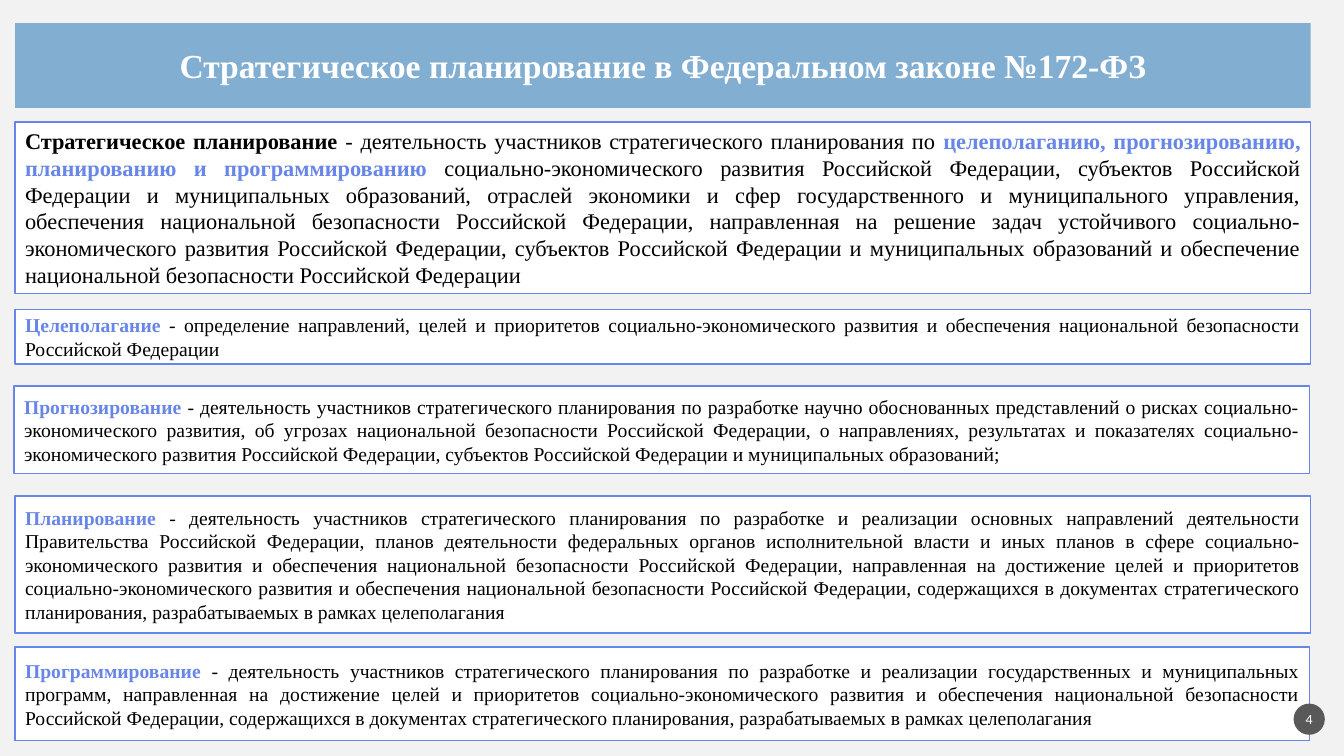
from dataclasses import dataclass

from pptx import Presentation
from pptx.dml.color import RGBColor
from pptx.enum.shapes import MSO_SHAPE as Preset
from pptx.enum.text import MSO_ANCHOR as Anchor, MSO_AUTO_SIZE as AutoSize, PP_ALIGN as Align
from pptx.util import Emu, Pt

PX = 9144  # 100 px to the inch

BACKGROUND = RGBColor(0xF2, 0xF2, 0xF2)
BANNER = RGBColor(0x82, 0xAE, 0xD2)
ACCENT = RGBColor(0x68, 0x86, 0xE7)
BADGE = RGBColor(0x59, 0x59, 0x59)
WHITE = RGBColor(0xFF, 0xFF, 0xFF)
BLACK = RGBColor(0x00, 0x00, 0x00)
SERIF = "Times New Roman"


@dataclass
class Span:
    text: str
    color: RGBColor = BLACK
    bold: bool = False


@dataclass
class Definition:
    left: int
    top: int
    width: int
    height: int
    spans: list[Span]
    size: int = 14


def term(word: str) -> Span:
    return Span(word, ACCENT, True)


DEFINITIONS = [
    Definition(15, 121, 1285, 170, [
        Span("Стратегическое планирование ", bold=True),
        Span("- деятельность участников стратегического планирования по "),
        term("целеполаганию, прогнозированию, планированию и программированию "),
        Span("социально-экономического развития Российской Федерации, субъектов Российской "
             "Федерации и муниципальных образований, отраслей экономики и сфер государственного "
             "и муниципального управления, обеспечения национальной безопасности Российской "
             "Федерации, направленная на решение задач устойчивого социально-экономического "
             "развития Российской Федерации, субъектов Российской Федерации и муниципальных "
             "образований и обеспечение национальной безопасности Российской Федерации"),
    ], size=16),
    Definition(15, 307, 1285, 54, [
        term("Целеполагание"),
        Span(" - определение направлений, целей и приоритетов социально-экономического развития "
             "и обеспечения национальной безопасности Российской Федерации"),
    ]),
    Definition(14, 383, 1285, 87, [
        term("Прогнозирование"),
        Span(" - деятельность участников стратегического планирования по разработке научно "
             "обоснованных представлений о рисках социально-экономического развития, об угрозах "
             "национальной безопасности Российской Федерации, о направлениях, результатах и "
             "показателях социально-экономического развития Российской Федерации, субъектов "
             "Российской Федерации и муниципальных образований;"),
    ]),
    Definition(15, 492, 1285, 136, [
        term("Планирование"),
        Span(" - деятельность участников стратегического планирования по разработке и реализации "
             "основных направлений деятельности Правительства Российской Федерации, планов "
             "деятельности федеральных органов исполнительной власти и иных планов в сфере "
             "социально-экономического развития и обеспечения национальной безопасности "
             "Российской Федерации, направленная на достижение целей и приоритетов "
             "социально-экономического развития и обеспечения национальной безопасности "
             "Российской Федерации, содержащихся в документах стратегического планирования, "
             "разрабатываемых в рамках целеполагания"),
    ]),
    Definition(15, 642, 1284, 93, [
        term("Программирование"),
        Span(" - деятельность участников стратегического планирования по разработке и реализации "
             "государственных и муниципальных программ, направленная на достижение целей и "
             "приоритетов социально-экономического развития и обеспечения национальной "
             "безопасности Российской Федерации, содержащихся в документах стратегического "
             "планирования, разрабатываемых в рамках целеполагания"),
    ]),
]


def px(*lengths: int) -> list[Emu]:
    return [Emu(length * PX) for length in lengths]


def set_font(paragraph, name: str, size: int, align: Align) -> None:
    paragraph.alignment = align
    paragraph.font.name = name
    paragraph.font.size = Pt(size)


def fill_solid(part, color: RGBColor) -> None:
    part.fill.solid()
    part.fill.fore_color.rgb = color


def format_title(title) -> None:
    title.left, title.top, title.width, title.height = px(15, 23, 1285, 84)
    fill_solid(title, BANNER)
    frame = title.text_frame
    frame.text = "Стратегическое планирование в Федеральном законе №172-ФЗ"
    frame.auto_size = AutoSize.NONE
    frame.vertical_anchor = Anchor.MIDDLE
    heading = frame.paragraphs[0]
    set_font(heading, SERIF, 24, Align.CENTER)
    heading.font.bold = True
    heading.font.color.rgb = WHITE


def draw_definition(slide, definition: Definition) -> None:
    box = slide.shapes.add_shape(Preset.RECTANGLE, *px(
        definition.left, definition.top, definition.width, definition.height))
    box.shadow.inherit = False
    fill_solid(box, WHITE)
    box.line.color.rgb = ACCENT
    box.line.width = Pt(1)
    box.text_frame.word_wrap = True
    box.text_frame.vertical_anchor = Anchor.MIDDLE
    wording = box.text_frame.paragraphs[0]
    set_font(wording, SERIF, definition.size, Align.JUSTIFY)
    for span in definition.spans:
        run = wording.add_run()
        run.text = span.text
        run.font.bold = span.bold
        run.font.color.rgb = span.color


def draw_page_number(slide, number: str) -> None:
    badge = slide.shapes.add_shape(Preset.OVAL, *px(1283, 698, 31, 31))
    badge.shadow.inherit = False
    fill_solid(badge, BADGE)
    badge.line.fill.background()
    frame = badge.text_frame
    frame.margin_left = frame.margin_top = frame.margin_right = frame.margin_bottom = 0
    frame.vertical_anchor = Anchor.MIDDLE
    frame.text = number
    set_font(frame.paragraphs[0], "Calibri", 10, Align.CENTER)
    frame.paragraphs[0].font.color.rgb = WHITE


def main() -> None:
    deck = Presentation()
    deck.slide_width, deck.slide_height = px(1333, 750)
    slide = deck.slides.add_slide(deck.slide_layouts[5])  # title only
    fill_solid(slide.background, BACKGROUND)

    format_title(slide.shapes.title)
    for definition in DEFINITIONS:
        draw_definition(slide, definition)
    draw_page_number(slide, "4")

    deck.save("out.pptx")


if __name__ == "__main__":
    main()
